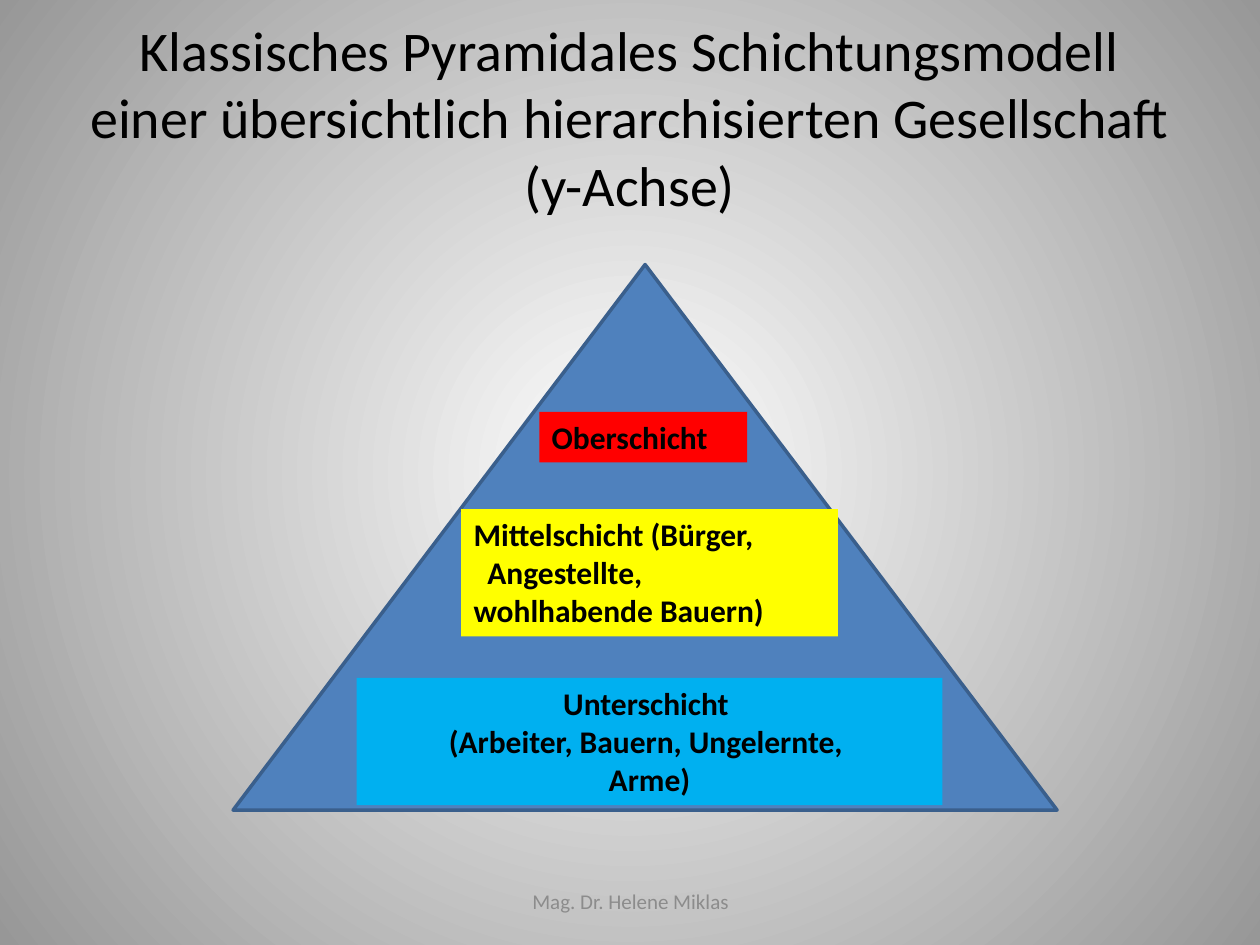
"""Builds a slide showing the pyramidal model of social strata."""
from lxml.etree import SubElement
from pptx import Presentation
from pptx.dml.color import RGBColor
from pptx.enum.shapes import MSO_SHAPE as Shape
from pptx.enum.text import MSO_ANCHOR as Anchor, PP_ALIGN as Align
from pptx.oxml.ns import qn
from pptx.util import Inches, Pt

BLACK = RGBColor(0x00, 0x00, 0x00)
WHITE = RGBColor(0xFF, 0xFF, 0xFF)
EDGE_GRAY = RGBColor(0x97, 0x97, 0x97)
FOOTER_GRAY = RGBColor(0x8C, 0x8C, 0x8C)
BLUE = RGBColor(0x4F, 0x81, 0xBD)
DARK_BLUE = RGBColor(0x3A, 0x5F, 0x8C)
RED = RGBColor(0xFF, 0x00, 0x00)
YELLOW = RGBColor(0xFF, 0xFF, 0x00)
CYAN = RGBColor(0x00, 0xB0, 0xF0)

TITLE = ("Klassisches Pyramidales Schichtungsmodell\v"
         "einer übersichtlich hierarchisierten Gesellschaft (y-Achse)")
FOOTER = "Mag. Dr. Helene Miklas"
PYRAMID = (1.85, 2.1, 6.54, 4.33)
STRATA = [
    ((4.28, 3.27, 1.65, 0.4), RED, Align.LEFT, [("Oberschicht", 0)]),
    ((3.66, 4.04, 2.99, 1.01), YELLOW, Align.LEFT,
     [("Mittelschicht (Bürger,", 0), ("Angestellte,", 0.11), ("wohlhabende Bauern)", 0)]),
    ((2.83, 5.38, 4.65, 1.01), CYAN, Align.CENTER,
     [("Unterschicht ", 0), ("(Arbeiter, Bauern, Ungelernte, ", 0), ("Arme)", 0)]),
]


def set_background(slide):
    fill = slide.background.fill
    fill.gradient()
    for stop, color in zip(fill.gradient_stops, (WHITE, EDGE_GRAY)):
        stop.color.rgb = color
    linear = slide.element.find(".//" + qn("a:lin"))
    gradient = linear.getparent()
    gradient.remove(linear)
    circle = SubElement(gradient, qn("a:path"), {"path": "circle"})
    SubElement(circle, qn("a:fillToRect"), dict.fromkeys("ltrb", "50000"))


def write(shape, lines, size, color=BLACK, align=Align.CENTER, anchor=Anchor.MIDDLE, bold=False):
    frame = shape.text_frame
    frame.word_wrap = True
    frame.vertical_anchor = anchor
    frame.text = "\n".join(text for text, _ in lines)
    for paragraph, (_, indent) in zip(frame.paragraphs, lines):
        paragraph.alignment = align
        font = paragraph.font
        font.name, font.size, font.bold = "Calibri", Pt(size), bold
        font.color.rgb = color
        if indent:
            paragraph._p.get_or_add_pPr().set("marL", str(Inches(indent)))


def add_filled(slide, kind, box, color):
    shape = slide.shapes.add_shape(kind, *map(Inches, box))
    shape.shadow.inherit = False
    shape.fill.solid()
    shape.fill.fore_color.rgb = color
    shape.line.fill.background()
    return shape


def add_text(slide, box, text, size, color):
    write(slide.shapes.add_textbox(*map(Inches, box)), [(text, 0)], size, color)


def main():
    presentation = Presentation()
    presentation.slide_width, presentation.slide_height = Inches(10), Inches(7.5)
    slide = presentation.slides.add_slide(presentation.slide_layouts[6])
    set_background(slide)
    add_text(slide, (0.5, 0.3, 9, 1.25), TITLE, 32, BLACK)

    pyramid = add_filled(slide, Shape.ISOSCELES_TRIANGLE, PYRAMID, BLUE)
    pyramid.line.color.rgb = DARK_BLUE
    pyramid.line.width = Pt(2)
    for box, color, align, lines in STRATA:
        stratum = add_filled(slide, Shape.RECTANGLE, box, color)
        write(stratum, lines, 18, align=align, anchor=Anchor.TOP, bold=True)

    add_text(slide, (3.42, 6.95, 3.17, 0.4), FOOTER, 12, FOOTER_GRAY)
    presentation.save("out.pptx")


if __name__ == "__main__":
    main()
